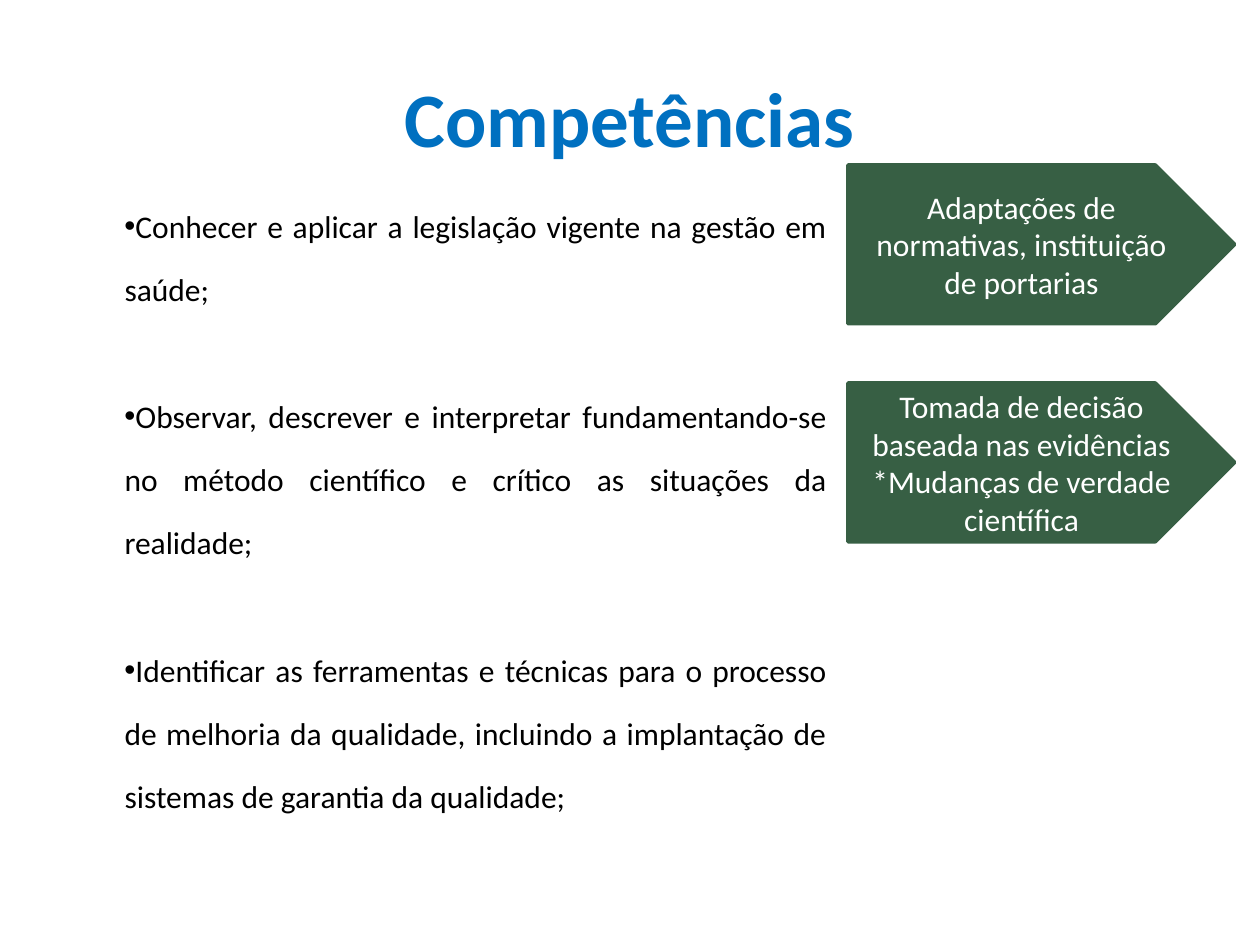
from dataclasses import dataclass

from lxml import etree
from pptx import Presentation
from pptx.dml.color import RGBColor
from pptx.enum.shapes import MSO_SHAPE
from pptx.enum.text import MSO_ANCHOR, PP_ALIGN
from pptx.oxml.ns import qn
from pptx.util import Inches, Pt

PENTAGON = MSO_SHAPE.PENTAGON
MIDDLE = MSO_ANCHOR.MIDDLE
CENTER, JUSTIFY = PP_ALIGN.CENTER, PP_ALIGN.JUSTIFY
FONT = "Calibri"
BODY_SIZE = 18
LINE_SPACING = 1.67
ITEM_GAP = 36.7
COLORS = {"title": "0070C0", "body": "000000", "arrow": "375F44", "arrow_text": "FFFFFF"}


@dataclass
class Arrow:
    top: float
    lines: list[str]


COMPETENCIES = [
    "Conhecer e aplicar a legislação vigente na gestão em saúde;",
    "Observar, descrever e interpretar fundamentando-se no método científico "
    "e crítico as situações da realidade;",
    "Identificar as ferramentas e técnicas para o processo de melhoria da qualidade, "
    "incluindo a implantação de sistemas de garantia da qualidade;",
]
ARROWS = [
    Arrow(1.31, ["Adaptações de normativas, instituição de portarias"]),
    Arrow(3.04, ["Tomada de decisão baseada nas evidências", "*Mudanças de verdade científica"]),
]


def rgb(name: str) -> RGBColor:
    return RGBColor.from_string(COLORS[name])


def write(tf, lines: list[str], size: float, color: str, align, bold: bool = False) -> None:
    tf.word_wrap = True
    tf.text = "\n".join(lines)
    for p in tf.paragraphs:
        p.alignment = align
        for r in p.runs:
            r.font.name = FONT
            r.font.size = Pt(size)
            r.font.bold = bold
            r.font.color.rgb = rgb(color)


def add_bullet(p) -> None:
    """Put a bullet right before the text, with no hanging indent."""
    pPr = p._p.get_or_add_pPr()
    pPr.set("marL", str(Inches(0.38)))
    pPr.set("indent", "0")
    etree.SubElement(pPr, qn("a:buFont")).set("typeface", "Arial")
    etree.SubElement(pPr, qn("a:buChar")).set("char", "•")


def add_title(slide, text: str) -> None:
    s = slide.shapes.add_textbox(Inches(0.5), Inches(0.3), Inches(9), Inches(1.25))
    s.text_frame.vertical_anchor = MIDDLE
    write(s.text_frame, [text], 44, "title", CENTER, bold=True)


def add_competencies(slide, items: list[str]) -> None:
    s = slide.shapes.add_textbox(Inches(0.51), Inches(1.39), Inches(6.15), Inches(4.13))
    write(s.text_frame, items, BODY_SIZE, "body", JUSTIFY)
    for i, p in enumerate(s.text_frame.paragraphs):
        p.line_spacing = LINE_SPACING
        p.space_before = Pt(ITEM_GAP if i else 0)
        add_bullet(p)


def add_arrow(slide, arrow: Arrow) -> None:
    s = slide.shapes.add_shape(PENTAGON, Inches(6.73), Inches(arrow.top), Inches(3.07), Inches(1.26))
    s.shadow.inherit = False
    s.fill.solid()
    s.fill.fore_color.rgb = rgb("arrow")
    s.line.color.rgb = rgb("arrow")
    s.line.width = Pt(2)
    s.text_frame.vertical_anchor = MIDDLE
    write(s.text_frame, arrow.lines, BODY_SIZE, "arrow_text", CENTER)


def main() -> None:
    prs = Presentation()
    prs.slide_width, prs.slide_height = Inches(10), Inches(7.5)
    slide = prs.slides.add_slide(prs.slide_layouts[6])
    add_title(slide, "Competências")
    add_competencies(slide, COMPETENCIES)
    for arrow in ARROWS:
        add_arrow(slide, arrow)
    prs.save("out.pptx")


if __name__ == "__main__":
    main()
